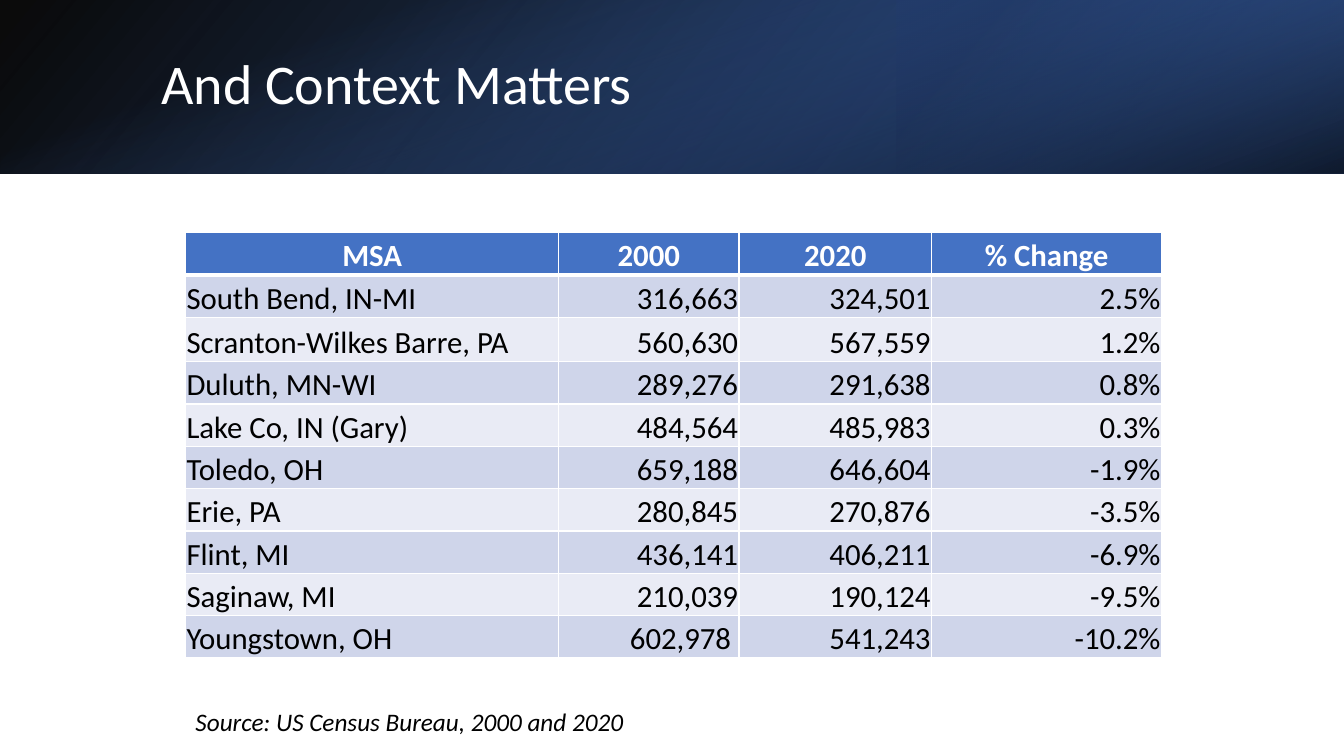
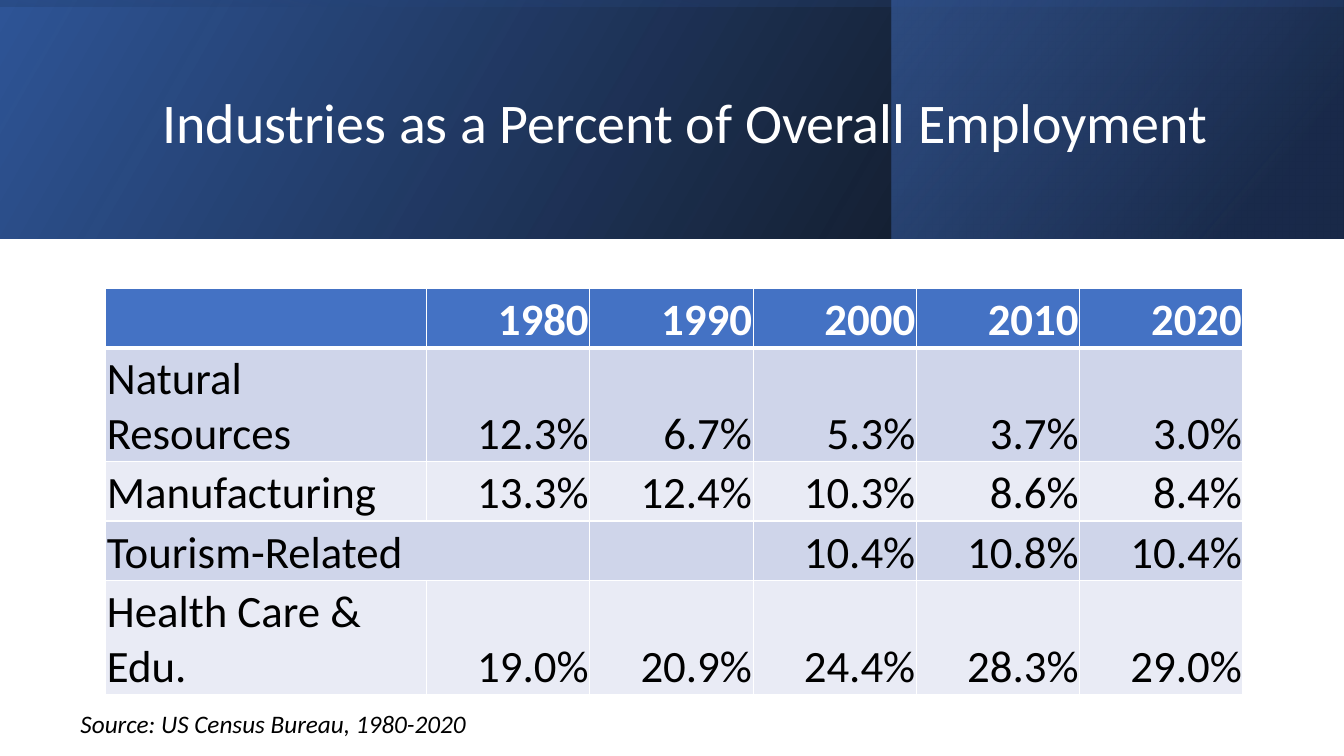
"""Build two slides of census tables under gradient title bands."""
import lxml.etree
import pptx
import pptx.dml.color
import pptx.enum.shapes
import pptx.enum.text
import pptx.oxml.ns
import pptx.util

Inches, Pt = pptx.util.Inches, pptx.util.Pt
qn = pptx.oxml.ns.qn
ALIGN = pptx.enum.text.PP_ALIGN
ANCHOR = pptx.enum.text.MSO_ANCHOR
FIT = pptx.enum.text.MSO_AUTO_SIZE

HUES = {
    "white": "FFFFFF", "black": "000000", "blue": "4472C4", "deep": "2F5597",
    "navy": "203864", "dark": "CFD5EA", "light": "E9EBF5",
}
FONTS = {
    "title": {"name": "Calibri", "size": Pt(40), "bold": False},
    "source": {"name": "Calibri", "size": Pt(18), "italic": True},
}
INSETS = {
    "margin_left": Inches(0.01), "margin_right": Inches(0.01),
    "margin_top": Inches(0.01), "margin_bottom": 0,
    "vertical_anchor": ANCHOR.BOTTOM,
}
WIDE, HIGH = 13.33, 7.5

CITIES = [
    ("MSA", "2000", "2020", "% Change"),
    ("South Bend, IN-MI", "316,663", "324,501", "2.5%"),
    ("Scranton-Wilkes Barre, PA", "560,630", "567,559", "1.2%"),
    ("Duluth, MN-WI", "289,276", "291,638", "0.8%"),
    ("Lake Co, IN (Gary)", "484,564", "485,983", "0.3%"),
    ("Toledo, OH", "659,188", "646,604", "-1.9%"),
    ("Erie, PA", "280,845", "270,876", "-3.5%"),
    ("Flint, MI", "436,141", "406,211", "-6.9%"),
    ("Saginaw, MI", "210,039", "190,124", "-9.5%"),
    ("Youngstown, OH", "602,978 ", "541,243", "-10.2%"),
]
TRADES = [
    ("", "1980", "1990", "2000", "2010", "2020"),
    ("Natural Resources", "12.3%", "6.7%", "5.3%", "3.7%", "3.0%"),
    ("Manufacturing", "13.3%", "12.4%", "10.3%", "8.6%", "8.4%"),
    ("Tourism-Related", "", "", "10.4%", "10.8%", "10.4%"),
    ("Health Care & Edu.", "19.0%", "20.9%", "24.4%", "28.3%", "29.0%"),
]


def paint(hue):
    """Return the named colour."""
    return pptx.dml.color.RGBColor.from_string(HUES[hue])


def apply(target, looks):
    """Set each format value on the target."""
    for name, value in looks.items():
        setattr(target, name, value)


def write(para, text, looks, hue, align=ALIGN.LEFT):
    """Put styled text in a paragraph."""
    para.text = text
    para.alignment = align
    apply(para.font, looks)
    para.font.color.rgb = paint(hue)


def add_band(slide, box, turn, flip, angle, stops):
    """Add a gradient rectangle with see-through stops."""
    kind = pptx.enum.shapes.MSO_SHAPE.RECTANGLE
    band = slide.shapes.add_shape(kind, *map(Inches, box))
    band.rotation = turn
    band.shadow.inherit = False
    band.line.fill.background()
    if flip:
        band._element.spPr.xfrm.set("flipH", "1")
    band.fill.gradient()
    band.fill.gradient_angle = 360 - angle
    for stop, (place, hue, alpha) in zip(band.fill.gradient_stops, stops):
        stop.position = place / 100
        stop.color.rgb = paint(hue)
    tints = band._element.spPr.iter(qn("a:srgbClr"))
    for tint, (place, hue, alpha) in zip(tints, stops):
        lxml.etree.SubElement(tint, qn("a:alpha"), val=str(alpha * 1000))


def add_title(slide, text, box):
    """Place the title on top of the bands."""
    title = slide.shapes.title
    title._element.getparent().append(title._element)
    spots = ("left", "top", "width", "height")
    apply(title, dict(zip(spots, map(Inches, box))))
    frame = title.text_frame
    apply(frame, {"word_wrap": True, "auto_size": FIT.NONE,
                  "vertical_anchor": ANCHOR.MIDDLE})
    para = frame.paragraphs[0]
    write(para, text, FONTS["title"], "white")
    para.line_spacing = 0.9


def add_edge(cell, side, width):
    """Draw a white border on one side of a cell."""
    props = cell._tc.get_or_add_tcPr()
    line = lxml.etree.SubElement(props, qn("a:ln" + side), w=str(Pt(width)))
    fill = lxml.etree.SubElement(line, qn("a:solidFill"))
    lxml.etree.SubElement(fill, qn("a:srgbClr"), val=HUES["white"])


def add_grid(slide, data, spot, cols, rows, size, head):
    """Add a banded table and return it."""
    box = (*spot, sum(cols), sum(rows))
    frame = slide.shapes.add_table(len(rows), len(cols), *map(Inches, box))
    grid = frame.table
    for col, width in zip(grid.columns, cols):
        col.width = Inches(width)
    for row, height in zip(grid.rows, rows):
        row.height = Inches(height)
    for r, texts in enumerate(data):
        fill = "blue" if r == 0 else "dark" if r % 2 else "light"
        for c, text in enumerate(texts):
            cell = grid.cell(r, c)
            apply(cell, INSETS)
            for side in "LRTB":
                thick = (r, side) in ((0, "B"), (1, "T"))
                add_edge(cell, side, 3 if thick else 1)
            cell.fill.solid()
            cell.fill.fore_color.rgb = paint(fill)
            align = head if r == 0 else ALIGN.RIGHT if c else ALIGN.LEFT
            looks = {"name": "Calibri", "size": Pt(size), "bold": r == 0}
            write(cell.text_frame.paragraphs[0], text, looks,
                  "black" if r else "white", align)
    return grid


def add_source(slide, text, box):
    """Add the source line below the table."""
    frame = slide.shapes.add_textbox(*map(Inches, box)).text_frame
    apply(frame, {"word_wrap": False, "auto_size": FIT.SHAPE_TO_FIT_TEXT})
    write(frame.paragraphs[0], text, FONTS["source"], "black")


def add_slide(deck, bands, title, box):
    """Add a slide with its bands and title."""
    slide = deck.slides.add_slide(deck.slide_layouts[5])
    for band in bands:
        add_band(slide, *band)
    add_title(slide, title, box)
    return slide


def upright(tall):
    """Return the box that covers the band once turned a quarter."""
    return ((WIDE - tall) / 2, (tall - WIDE) / 2, tall, WIDE)


def main():
    """Build and save the deck."""
    deck = pptx.Presentation()
    apply(deck, {"slide_width": Inches(WIDE), "slide_height": Inches(HIGH)})
    base = [(0, "black", 96), (100, "deep", 100)]

    tall = 1.72
    bands = [
        ((0, 0, WIDE, tall), 0, True, 140, base),
        ((8.89, 0, 4.44, tall), 180, True, 320,
         [(19, "navy", 68), (100, "blue", 79)]),
        (upright(tall), 90, False, 340,
         [(23, "blue", 0), (99, "black", 74)]),
    ]
    slide = add_slide(deck, bands, "And Context Matters",
                      (1.5, 0.38, 10.98, 0.96))
    rows = [0.42] * len(CITIES)
    rows[2] = 0.44
    add_grid(slide, CITIES, (1.84, 2.31), [3.7, 1.79, 1.91, 2.28], rows,
             22, ALIGN.CENTER)
    add_source(slide, "Source: US Census Bureau, 2000 and 2020",
               (1.84, 6.96, 4.49, 0.4))

    tall = 2.37
    bands = [
        ((0, 0, WIDE, tall), 0, True, 330, base),
        ((8.84, 0, 4.48, tall), 0, True, 320,
         [(19, "navy", 68), (100, "blue", 48)]),
        (upright(tall), 270, True, 350,
         [(23, "deep", 16), (99, "black", 45)]),
    ]
    slide = add_slide(deck, bands,
                      "Industries as a Percent of Overall Employment",
                      (1.51, 0.38, 10.63, 1.72))
    grid = add_grid(slide, TRADES, (1.05, 2.86), [3.18] + [1.62] * 5,
                    [0.59, 1.13, 0.59, 0.59, 1.13], 32, ALIGN.RIGHT)
    grid.cell(3, 0).merge(grid.cell(3, 1))
    add_source(slide, "Source: US Census Bureau, 1980-2020",
               (0.7, 6.98, 4.07, 0.4))

    deck.save("out.pptx")


if __name__ == "__main__":
    main()
